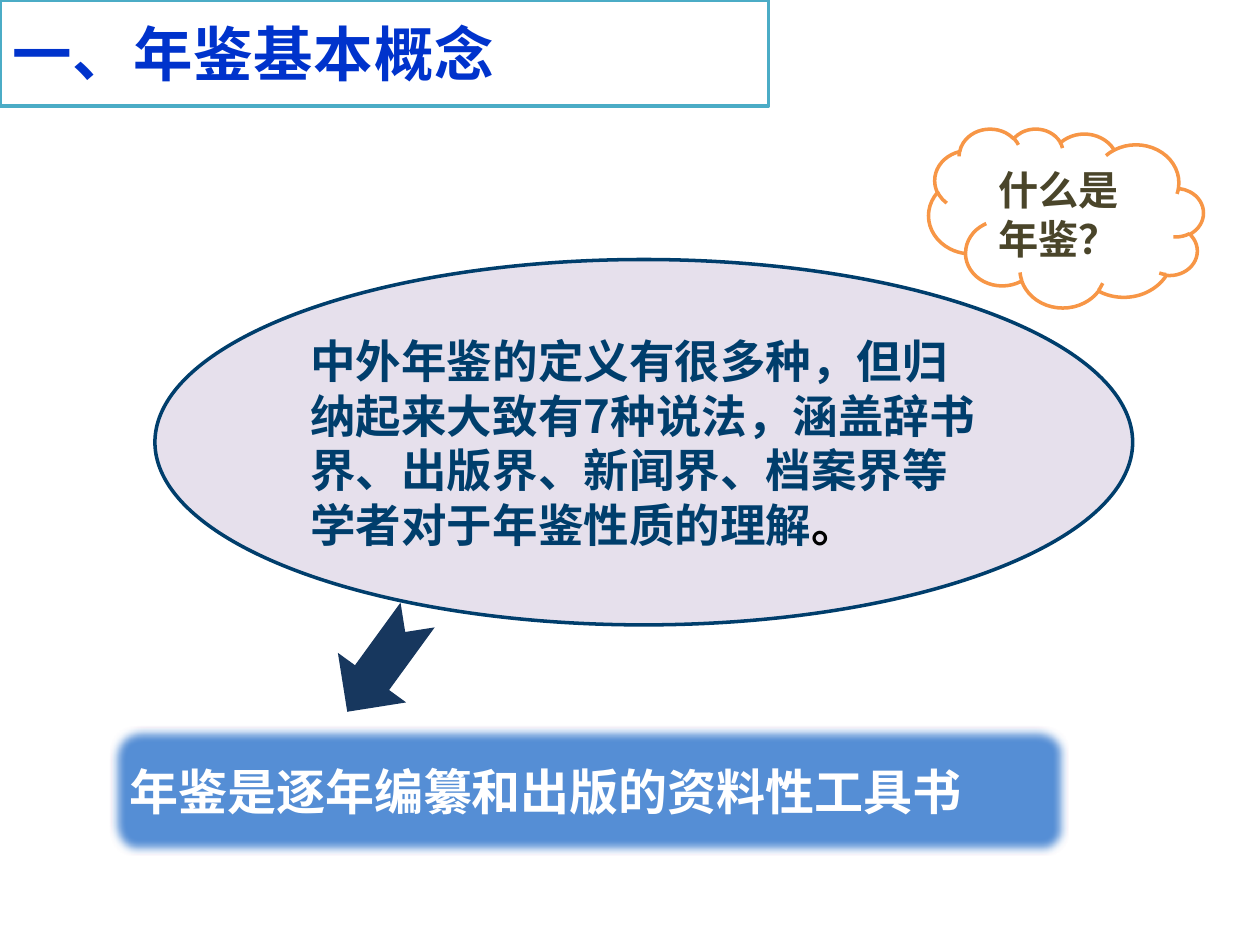
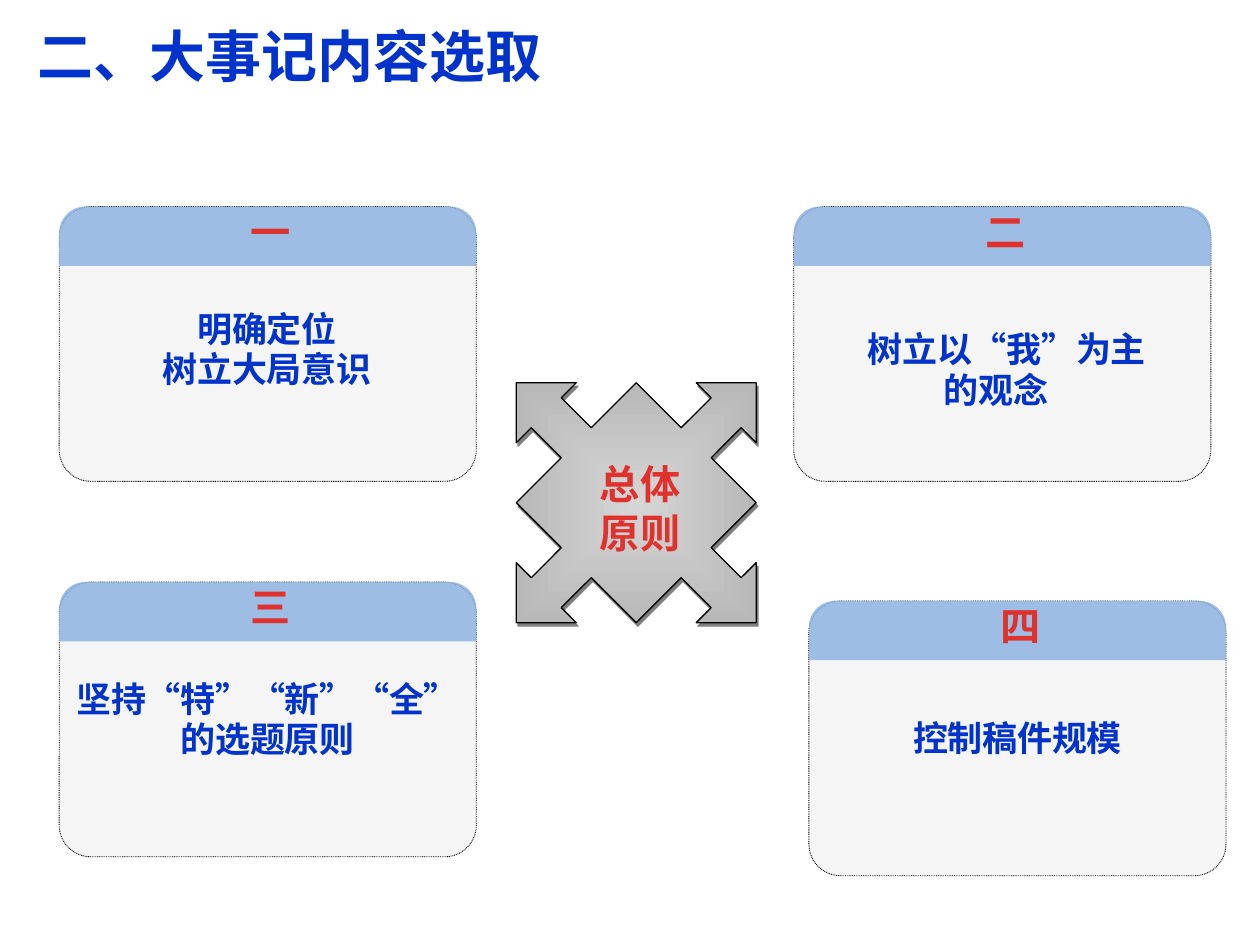
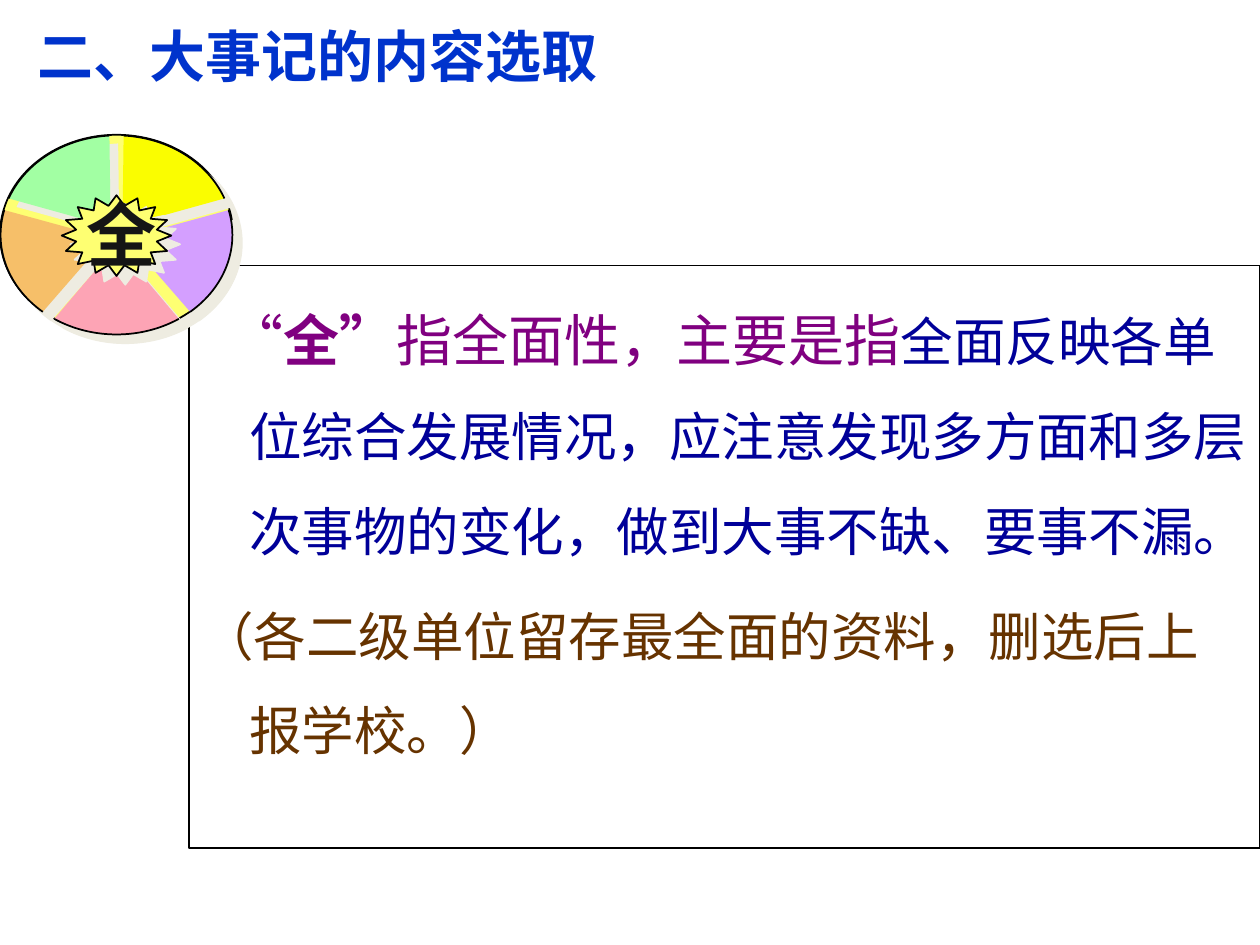
import copy
import math

import pptx
import pptx.dml.color
import pptx.enum.dml
import pptx.enum.lang
import pptx.enum.shapes
import pptx.enum.text
import pptx.oxml
import pptx.oxml.ns
import pptx.util

Inches, Pt = pptx.util.Inches, pptx.util.Pt
SHAPE = pptx.enum.shapes.MSO_SHAPE
ALIGN = pptx.enum.text.PP_ALIGN
ANCHOR = pptx.enum.text.MSO_ANCHOR
qn = pptx.oxml.ns.qn

COLORS = {
    "white": "FFFFFF", "black": "000000", "title": "0033CC", "navy": "003E6C",
    "lilac": "E6E0EC", "arrow": "17375E", "orange": "F79646", "olive": "4A452A",
    "teal": "4BACC6", "banner": "558ED5", "violet": "7030A0", "red": "E0322D",
    "card": "4D4D4D", "header": "8EB4E3", "star": "FEFF72", "shade": "EEECE1",
    "ink": "151515", "purple": "800080", "blue": "000099", "brown": "663300",
    "light": "D6D6D6", "dark": "B8B8B8",
}
SC, JP = "Noto Sans CJK SC", "Noto Sans CJK JP"


def style(size, font, color, bold=True, spacing=0):
    return {"size": size, "font": font, "color": color, "bold": bold, "spacing": spacing}


STYLES = {
    "boxed title": style(34, SC, "title", spacing=0.5),
    "title": style(32, SC, "title"),
    "banner": style(28, SC, "white"),
    "definition": style(26, JP, "navy"),
    "full stop": style(26, JP, "black"),
    "question": style(23, JP, "olive"),
    "label": style(23, "Roboto Condensed", "red", spacing=0.5),
    "card": style(20, "Times New Roman", "title", spacing=-0.2),
    "badge": style(40, "Times New Roman", "ink"),
    "quote": style(32, "Arial", "purple", bold=False),
    "key": style(32, "Calibri", "purple"),
    "lead": style(32, "Calibri", "purple", bold=False),
    "body": style(30, JP, "blue", bold=False),
    "note": style(30, JP, "brown", bold=False),
}

DEFINITION = [("中外年鉴的定义有很多种，但归纳起来大致有7种说法，涵盖辞书界、出版界、新闻界、"
               "档案界等学者对于年鉴性质的理解", "definition"), ("。", "full stop")]

# number, left, top, lines, box for the lines (None: the middle of the card), indent of first line
CARDS = [
    ("一", 0.47, 1.64, ["明确定位", "树立大局意识"], (0.51, 2.4, 3.22, 0.75), 0),
    ("二", 6.3, 1.64, ["树立以“我”为主", "的观念"], (6.34, 2.56, 3.13, 0.75), 0.17),
    ("三", 0.47, 4.62, ["坚持“特”“新”“全”", "的选题原则"], None, 0),
    ("四", 6.42, 4.77, ["控制稿件规模"], None, 0),
]
CARD_WIDTH, CARD_HEIGHT, HEADER_HEIGHT = 3.31, 2.18, 0.47
NUMBER_SHIFT, NUMBER_SIZE = (0.44, -0.05), (2.48, 0.49)

STAR_CENTER, STAR_UNIT = (5.05, 3.99), 0.119
STAR_QUARTER = [(-8, -8), (-4, -8), (-5, -7), (-3, -5), (0, -8), (3, -5), (5, -7), (4, -8)]

COMPLETENESS = [
    [("“", "quote"), ("全”", "key"), ("指全面性，主要是指", "lead"),
     ("全面反映各单位综合发展情况，应注意发现多方面和多层次事物的变化，做到大事不缺、要事不漏。", "body")],
    [("（各二级单位留存最全面的资料，删选后上报学校。）", "note")],
]
WHEEL = {"center": (0.925, 1.865), "radii": (0.92, 0.79), "explode": 0.08, "trim": 3.5,
         "colors": ["D49FFF", "FDA4B5", "F6BF69", "A2FFA3", "FAFD00"]}


def rgb(name):
    return pptx.dml.color.RGBColor.from_string(COLORS.get(name, name))


def xml(markup):
    head, rest = markup.split(" ", 1)
    return pptx.oxml.parse_xml(f"{head} {pptx.oxml.ns.nsdecls('a')} {rest}")


def paint(shape, fill, line=None, width=1, alpha=None, effect=None):
    """Set fill, outline, opacity in percent and an optional effect element."""
    shape.shadow.inherit = False
    shape.fill.solid()
    shape.fill.fore_color.rgb = rgb(fill)
    properties = shape._element.spPr
    if alpha:
        color = properties.find(qn("a:solidFill"))[0]
        color.append(xml(f'<a:alpha val="{alpha * 1000}"/>'))
    if line:
        shape.line.color.rgb = rgb(line)
        shape.line.width = Pt(width)
    else:
        shape.line.fill.background()
    if effect:
        properties.find(qn("a:effectLst")).append(xml(effect))
    return shape


def shadow(color, distance, angle, alpha=100):
    return (f'<a:outerShdw blurRad="0" dist="{Pt(distance)}" dir="{angle * 60000}" rotWithShape="0">'
            f'<a:srgbClr val="{COLORS[color]}"><a:alpha val="{alpha * 1000}"/></a:srgbClr></a:outerShdw>')


WHEEL_SHADOW = shadow("shade", 7.1, 45)


def add_shape(page, kind, place, *paint_args, **paint_options):
    shape = page.shapes.add_shape(kind, *map(Inches, place))
    return paint(shape, *paint_args, **paint_options)


def add_outline(page, points):
    """Closed freeform through points given in inches."""
    corners = [(Inches(x), Inches(y)) for x, y in points]
    builder = page.shapes.build_freeform(*corners[0], scale=1.0)
    builder.add_line_segments(corners[1:], close=True)
    return builder.convert_to_shape()


def write(shape, paragraphs, align=ALIGN.LEFT, anchor=ANCHOR.MIDDLE, wrap=True):
    """Fill a shape with paragraphs, each a list of (text, style name)."""
    frame = shape.text_frame
    frame.auto_size = pptx.enum.text.MSO_AUTO_SIZE.NONE
    frame.word_wrap = wrap
    frame.vertical_anchor = anchor
    for index, spans in enumerate(paragraphs):
        para = frame.add_paragraph() if index else frame.paragraphs[0]
        para.alignment = align
        for text, name in spans:
            look = STYLES[name]
            span = para.add_run()
            span.text = text
            font = span.font
            font.size, font.bold, font.name = Pt(look["size"]), look["bold"], look["font"]
            font.color.rgb = rgb(look["color"])
            font.language_id = pptx.enum.lang.MSO_LANGUAGE_ID.SIMPLIFIED_CHINESE
            properties = span._r.rPr
            if look["spacing"]:
                properties.set("spc", str(round(look["spacing"] * 100)))
            asian = look["font"] if look["font"] in (SC, JP) else SC
            properties.find(qn("a:latin")).addnext(xml(f'<a:ea typeface="{asian}"/>'))
    return frame


def add_text(page, place, paragraphs, **options):
    return write(page.shapes.add_textbox(*map(Inches, place)), paragraphs, **options)


def add_page(deck, title, look="title", place=(0, 0.12, 7.95, 0.64), indent=0.3):
    page = deck.slides.add_slide(deck.slide_layouts[5])
    box = page.shapes.title
    box.left, box.top, box.width, box.height = map(Inches, place)
    write(box, [[(title, look)]]).margin_left = Inches(indent)
    return page


def build_concept(deck):
    page = add_page(deck, "一、年鉴基本概念", "boxed title", (0, 0, 6.1, 0.84), 0.1)
    paint(page.shapes.title, "white", "teal", 2)
    banner = add_shape(page, SHAPE.FLOWCHART_ALTERNATE_PROCESS, (0.88, 5.77, 7.59, 1.01), "banner",
                       "violet", 1.5, effect=f'<a:softEdge rad="{Pt(5)}"/>')
    write(banner, [[("年鉴是逐年编纂和出版的资料性工具书", "banner")]])
    write(add_shape(page, SHAPE.OVAL, (1.23, 2.06, 7.76, 2.9), "lilac", "navy", 2), [DEFINITION])
    add_shape(page, SHAPE.NOTCHED_RIGHT_ARROW, (2.56, 4.93, 0.95, 0.67), "arrow").rotation = 126
    cloud = add_shape(page, SHAPE.CLOUD, (7.37, 1.02, 2.18, 1.42), "white", "orange", 2)
    cloud._element.spPr.find(qn("a:xfrm")).set("flipH", "1")
    write(cloud, [[("什么是年鉴？", "question")]])


def add_card(page, number, left, top, lines, text_place, indent):
    body = add_shape(page, SHAPE.ROUNDED_RECTANGLE, (left, top, CARD_WIDTH, CARD_HEIGHT),
                     "card", "black", 0.5, alpha=5)
    body.adjustments[0] = 0.115
    body.line.dash_style = pptx.enum.dml.MSO_LINE.ROUND_DOT
    header = add_shape(page, SHAPE.ROUND_2_SAME_RECTANGLE, (left, top, CARD_WIDTH, HEADER_HEIGHT),
                       "header", alpha=85)
    header.adjustments[0], header.adjustments[1] = 0.436, 0.012
    shift_x, shift_y = NUMBER_SHIFT
    add_text(page, (left + shift_x, top + shift_y, *NUMBER_SIZE), [[(number, "label")]],
             align=ALIGN.CENTER)
    paragraphs = [[(line, "card")] for line in lines]
    if text_place:
        frame = add_text(page, text_place, paragraphs, align=ALIGN.CENTER)
    else:
        frame = write(body, paragraphs, align=ALIGN.CENTER, wrap=False)
    for para in frame.paragraphs:
        para.line_spacing = Pt(23)
    if indent:
        frame.paragraphs[0]._p.get_or_add_pPr().set("indent", str(Inches(indent)))


def add_principle_star(page):
    """Eight-pointed arrow star: one quarter turned four times."""
    points, quarter = [], STAR_QUARTER
    for _ in range(4):
        points += quarter
        quarter = [(-y, x) for x, y in quarter]
    center_x, center_y = STAR_CENTER
    star = add_outline(page, [(center_x + x * STAR_UNIT, center_y + y * STAR_UNIT) for x, y in points])
    paint(star, "light", "black", 0.75, effect=shadow("black", 2.2, 63, 50))
    properties = star._element.spPr
    properties.replace(properties.find(qn("a:solidFill")), xml(
        '<a:gradFill rotWithShape="1"><a:gsLst>'
        f'<a:gs pos="0"><a:srgbClr val="{COLORS["light"]}"/></a:gs>'
        f'<a:gs pos="100000"><a:srgbClr val="{COLORS["dark"]}"/></a:gs></a:gsLst>'
        '<a:path path="rect"><a:fillToRect l="50000" t="50000" r="50000" b="50000"/></a:path>'
        '</a:gradFill>'))
    add_text(page, (4.65, 3.59, 0.86, 0.88), [[("总体", "label")], [("原则", "label")]],
             align=ALIGN.CENTER, wrap=False)


def build_principles(deck):
    page = add_page(deck, "二、大事记内容选取")
    add_principle_star(page)
    for card in CARDS:
        add_card(page, *card)


def add_wedge(page, start, sweep, color):
    """Wheel sector pushed outwards, with only its rim outlined."""
    (center_x, center_y), (radius_x, radius_y) = WHEEL["center"], WHEEL["radii"]
    first = math.radians(start + WHEEL["trim"])
    last = math.radians(start + sweep - WHEEL["trim"])
    middle = (first + last) / 2
    pull = 4 / 3 * math.tan((last - first) / 4)

    def on_rim(angle, along=0):
        """Rim point, moved along the tangent by a share of the radius."""
        return (center_x + radius_x * (math.cos(angle) - along * math.sin(angle)),
                center_y + radius_y * (math.sin(angle) + along * math.cos(angle)))

    apex = (center_x + WHEEL["explode"] * math.cos(middle),
            center_y + WHEEL["explode"] * math.sin(middle))
    points = [on_rim(first), on_rim(first, pull), on_rim(last, -pull), on_rim(last), apex]
    wedge = paint(add_outline(page, points), color, "black", 1, effect=WHEEL_SHADOW)
    sector = wedge._element.spPr.find(".//" + qn("a:path"))
    curve = xml("<a:cubicBezTo />")
    for segment in list(sector)[1:4]:
        curve.append(segment[0])
        sector.remove(segment)
    sector.insert(1, curve)
    arc = copy.deepcopy(sector)
    for segment in list(arc)[2:]:
        arc.remove(segment)
    arc.set("fill", "none")
    sector.set("stroke", "0")
    sector.addprevious(arc)


def build_completeness(deck):
    page = add_page(deck, "二、大事记的内容选取")
    panel = add_shape(page, SHAPE.RECTANGLE, (1.5, 2.11, 8.5, 4.62), "white", "black", 0.75)
    frame = write(panel, COMPLETENESS, anchor=ANCHOR.TOP)
    for para, indent in zip(frame.paragraphs, (-0.17, -0.38)):
        para.line_spacing = 1.5
        properties = para._p.get_or_add_pPr()
        properties.set("marL", str(Inches(0.38)))
        properties.set("indent", str(Inches(indent)))
    frame.paragraphs[1].space_before = Pt(6)

    add_shape(page, SHAPE.OVAL, (0, 1.07, 1.85, 1.58), "star", "black", 1, effect=WHEEL_SHADOW)
    sweep = 360 / len(WHEEL["colors"])
    for index, color in enumerate(WHEEL["colors"]):
        add_wedge(page, -18 + index * sweep, sweep, color)
    star = add_shape(page, SHAPE.STAR_16_POINT, (0.49, 1.55, 0.87, 0.64), "star", "black", 1,
                     effect=WHEEL_SHADOW)
    star.adjustments[0] = 0.375
    add_text(page, (0.59, 1.47, 0.72, 0.77), [[("全", "badge")]], align=ALIGN.CENTER)


def main():
    deck = pptx.Presentation()
    deck.slide_width, deck.slide_height = Inches(10), Inches(7.5)
    for build in (build_concept, build_principles, build_completeness):
        build(deck)
    deck.save("out.pptx")


if __name__ == "__main__":
    main()
